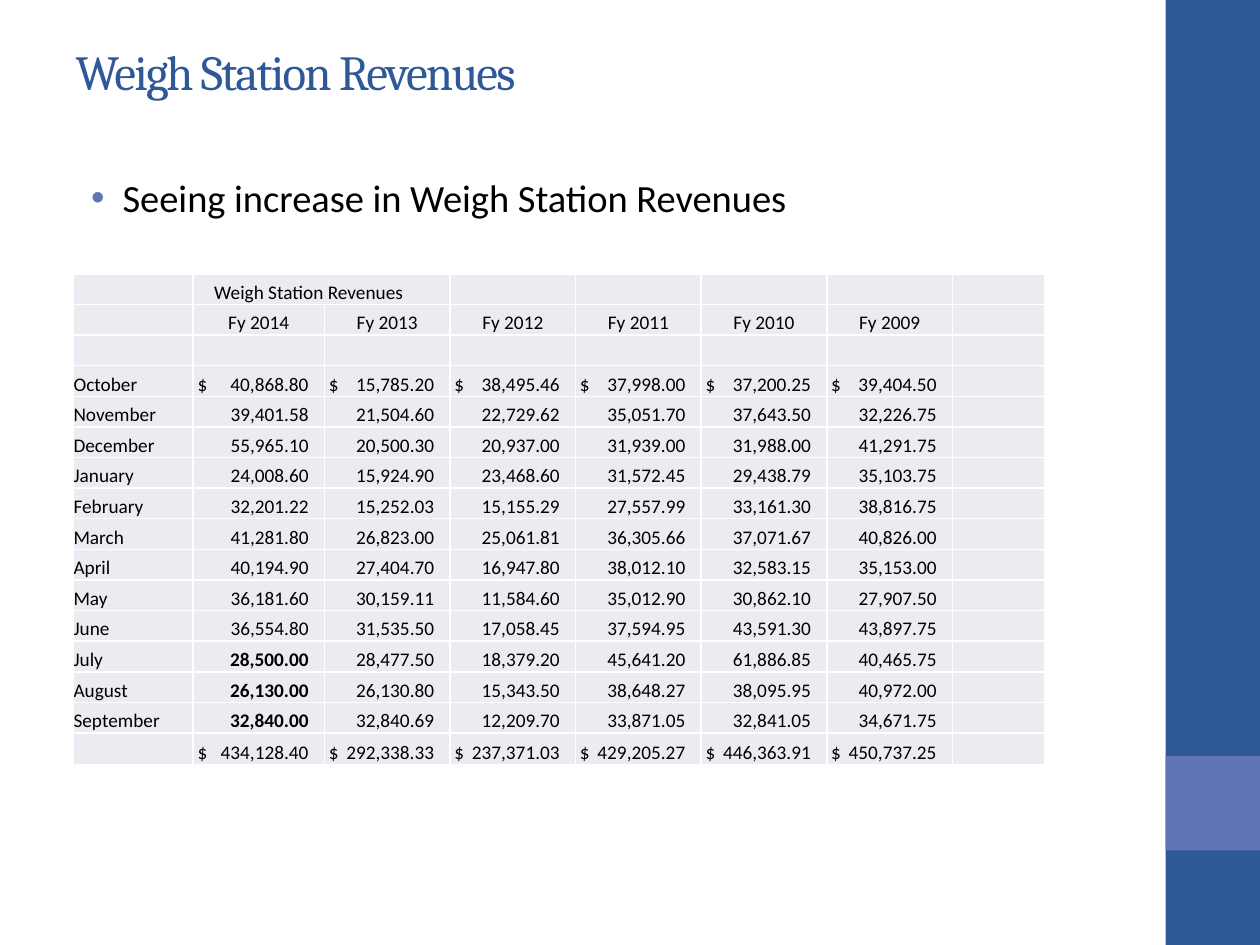
from lxml import etree
from pptx import Presentation
from pptx.dml.color import RGBColor
from pptx.enum.shapes import MSO_SHAPE
from pptx.enum.text import MSO_ANCHOR, MSO_AUTO_SIZE, PP_ALIGN
from pptx.oxml.ns import qn
from pptx.util import Pt

RECT = MSO_SHAPE.RECTANGLE
MIDDLE, BOTTOM = MSO_ANCHOR.MIDDLE, MSO_ANCHOR.BOTTOM
LEFT, CENTER, RIGHT = PP_ALIGN.LEFT, PP_ALIGN.CENTER, PP_ALIGN.RIGHT

# Content
TITLE = "Weigh Station Revenues"
POINT = "Seeing increase in Weigh Station Revenues"
HEAD = "Weigh Station Revenues"
YEARS = ["Fy 2014", "Fy 2013", "Fy 2012", "Fy 2011", "Fy 2010", "Fy 2009"]
MONTHS = [
    ("October", [40868.80, 15785.20, 38495.46, 37998.00, 37200.25, 39404.50]),
    ("November", [39401.58, 21504.60, 22729.62, 35051.70, 37643.50, 32226.75]),
    ("December", [55965.10, 20500.30, 20937.00, 31939.00, 31988.00, 41291.75]),
    ("January", [24008.60, 15924.90, 23468.60, 31572.45, 29438.79, 35103.75]),
    ("February", [32201.22, 15252.03, 15155.29, 27557.99, 33161.30, 38816.75]),
    ("March", [41281.80, 26823.00, 25061.81, 36305.66, 37071.67, 40826.00]),
    ("April", [40194.90, 27404.70, 16947.80, 38012.10, 32583.15, 35153.00]),
    ("May", [36181.60, 30159.11, 11584.60, 35012.90, 30862.10, 27907.50]),
    ("June", [36554.80, 31535.50, 17058.45, 37594.95, 43591.30, 43897.75]),
    ("July", [28500.00, 28477.50, 18379.20, 45641.20, 61886.85, 40465.75]),
    ("August", [26130.00, 26130.80, 15343.50, 38648.27, 38095.95, 40972.00]),
    ("September", [32840.00, 32840.69, 12209.70, 33871.05, 32841.05, 34671.75]),
    ("", [434128.40, 292338.33, 237371.03, 429205.27, 446363.91, 450737.25]),
]
DOLLAR = {"October", ""}
STRONG = {"July", "August", "September"}

COLORS = {"navy": "2F5897", "blue": "6076B4", "cell": "EAECF2",
          "white": "FFFFFF", "black": "000000"}
BARS = [("navy", 0, 540), ("blue", 432, 54)]
WIDTHS = [68.4, 75, 71.8, 71.8, 71.8, 71.8, 71.8, 52.5]
ROW, LAST = 17.5, 18
EDGE, PAD = 9, 2.5


def rgb(name):
    return RGBColor.from_string(COLORS[name])


def write(frame, text, size=11, font="Calibri", color="black", bold=False,
          align=LEFT):
    para = frame.paragraphs[0]
    para.alignment = align
    if not text:
        para._p.get_or_add_endParaRPr().set("sz", str(size * 100))
        return para
    run = para.add_run()
    run.text = text
    run.font.size, run.font.name, run.font.bold = Pt(size), font, bold
    run.font.color.rgb = rgb(color)
    return para


def put(cell, text="", left=0, right=0, tab=None, **style):
    cell.margin_left, cell.margin_right = Pt(left), Pt(right)
    cell.margin_top = cell.margin_bottom = 0
    cell.vertical_anchor = BOTTOM
    para = write(cell.text_frame, text, **style)
    if tab:
        stops = etree.SubElement(para._p.get_or_add_pPr(), qn("a:tabLst"))
        etree.SubElement(stops, qn("a:tab"), pos=str(Pt(tab)), algn="r")


def shade(cell):
    cell.fill.solid()
    cell.fill.fore_color.rgb = rgb("cell")
    props = cell._tc.get_or_add_tcPr()
    for i, side in enumerate(("lnL", "lnR", "lnT", "lnB")):
        line = etree.Element(qn("a:" + side), w=str(Pt(1)))
        fill = etree.SubElement(line, qn("a:solidFill"))
        etree.SubElement(fill, qn("a:srgbClr"), val=COLORS["white"])
        props.insert(i, line)


def main():
    prs = Presentation()
    prs.slide_width, prs.slide_height = Pt(720), Pt(540)
    slide = prs.slides.add_slide(prs.slide_layouts[5])
    shapes = slide.shapes

    # Side bars
    for color, top, high in BARS:
        bar = shapes.add_shape(RECT, Pt(666), Pt(top), Pt(54), Pt(high))
        bar.shadow.inherit = False
        bar.fill.solid()
        bar.fill.fore_color.rgb = rgb(color)
        bar.line.fill.background()

    # Title
    title = shapes.title
    title.left, title.top = Pt(36), Pt(21.6)
    title.width, title.height = Pt(648), Pt(38.2)
    frame = title.text_frame
    frame.auto_size = MSO_AUTO_SIZE.NONE
    frame.vertical_anchor = MIDDLE
    para = write(frame, TITLE, size=28, font="Cambria", color="navy")
    para.runs[0].font._element.set("spc", "-100")

    # Bullet point
    box = shapes.add_textbox(Pt(36), Pt(95.8), Pt(648), Pt(386.6))
    box.text_frame.word_wrap = True
    props = write(box.text_frame, POINT, size=22)._p.get_or_add_pPr()
    props.set("marL", str(Pt(27)))
    props.set("indent", str(Pt(-18)))
    tint = etree.SubElement(props, qn("a:buClr"))
    etree.SubElement(tint, qn("a:srgbClr"), val=COLORS["blue"])
    etree.SubElement(props, qn("a:buFont"), typeface="Arial")
    etree.SubElement(props, qn("a:buChar"), char="•")

    # Revenue table
    count = len(MONTHS) + 3
    high = ROW * (count - 1) + LAST
    table = shapes.add_table(count, len(WIDTHS), Pt(42), Pt(156.5),
                             Pt(sum(WIDTHS)), Pt(high)).table
    table.first_row = table.horz_banding = False
    for col, width in zip(table.columns, WIDTHS):
        col.width = Pt(width)
    for row in table.rows:
        row.height = Pt(ROW)
    table.rows[count - 1].height = Pt(LAST)
    for cell in table.iter_cells():
        shade(cell)

    # Heading rows
    table.cell(0, 1).merge(table.cell(0, 2))
    put(table.cell(0, 1), HEAD, left=12)
    for c, year in enumerate(YEARS, 1):
        put(table.cell(1, c), year, align=CENTER)

    # Months and totals
    for r, (month, sums) in enumerate(MONTHS, 3):
        put(table.cell(r, 0), month)
        for c, value in enumerate(sums, 1):
            cell, text = table.cell(r, c), f"{value:,.2f}"
            if month in DOLLAR:
                put(cell, "$\t" + text, left=PAD,
                    tab=WIDTHS[c] - EDGE - PAD)
            else:
                put(cell, text, right=EDGE, align=RIGHT,
                    bold=c == 1 and month in STRONG)

    # Empty cells
    for cell in table.iter_cells():
        if not cell.text_frame.text and not cell.is_spanned:
            put(cell)

    prs.save("out.pptx")


if __name__ == "__main__":
    main()
